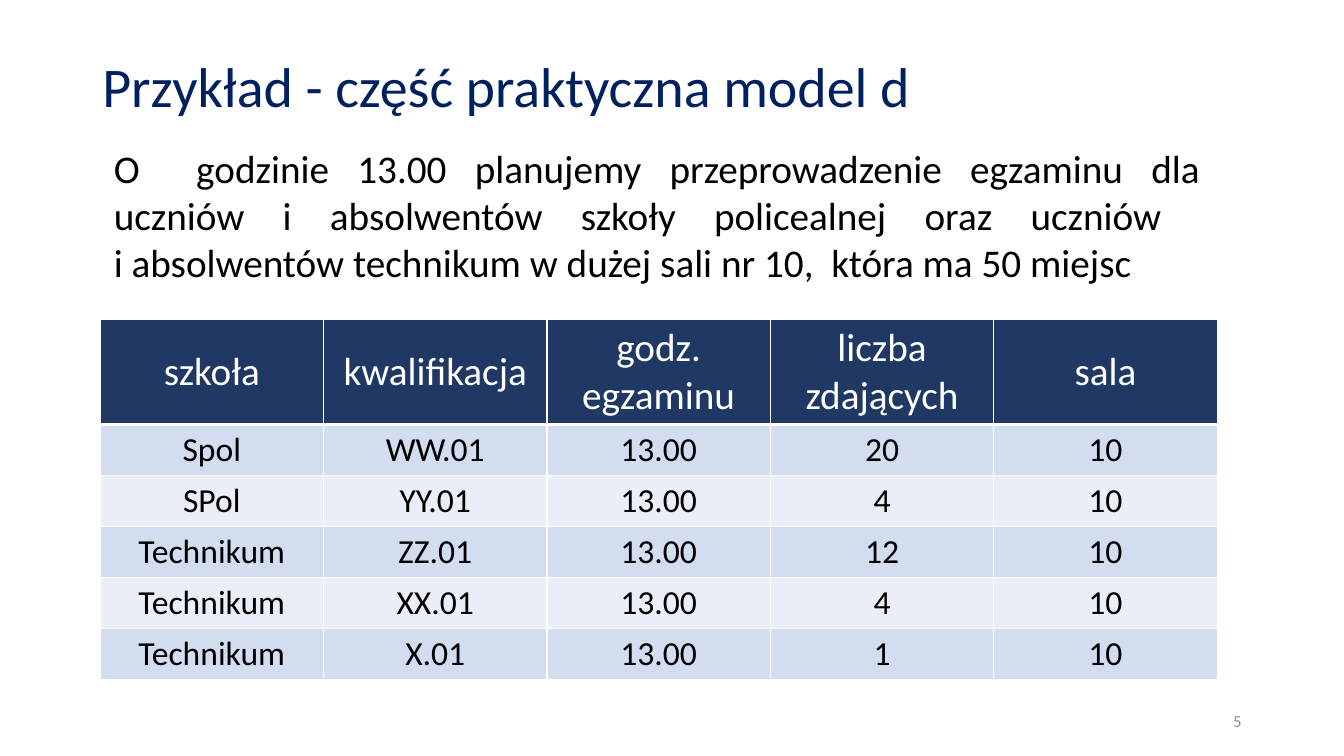
from lxml import etree
from pptx import Presentation
from pptx.dml.color import RGBColor
from pptx.enum import text
from pptx.oxml import ns
from pptx.util import Pt

COLOURS = {"navy": "002060", "header": "203864", "odd": "D2DEEF", "even": "EAEFF7",
           "white": "FFFFFF", "black": "000000", "grey": "8C8C8C"}
LEFT, CENTER = text.PP_ALIGN.LEFT, text.PP_ALIGN.CENTER
RIGHT, JUSTIFY = text.PP_ALIGN.RIGHT, text.PP_ALIGN.JUSTIFY
TOP, MIDDLE = text.MSO_ANCHOR.TOP, text.MSO_ANCHOR.MIDDLE


def write(frame, words, size, colour, align):
    para = frame.paragraphs[0]
    para.text = words
    para.alignment = align
    for span in para.runs:
        for name, value in {"name": "Calibri", "size": Pt(size), "bold": False}.items():
            setattr(span.font, name, value)
        span.font.color.rgb = RGBColor.from_string(COLOURS[colour])
    return para


def add_border(cell, side, width):
    line = etree.SubElement(cell._tc.get_or_add_tcPr(), ns.qn(f"a:ln{side}"), w=str(Pt(width)))
    fill = etree.SubElement(line, ns.qn("a:solidFill"))
    etree.SubElement(fill, ns.qn("a:srgbClr"), val=COLOURS["white"])


deck = Presentation()
deck.slide_width, deck.slide_height = Pt(960), Pt(540)
page = deck.slides.add_slide(deck.slide_layouts[6])

# Title, page number and introduction
intro = ("O  godzinie 13.00 planujemy przeprowadzenie egzaminu dla uczniów i absolwentów "
         "szkoły policealnej oraz uczniów \v"
         "i absolwentów technikum w dużej sali nr 10,  która ma 50 miejsc")
texts = [
    ((66, 35.3, 828, 56.9), "Przykład - część praktyczna model d", 40, "navy", LEFT, MIDDLE, 0.9),
    ((678, 500.5, 216, 28.8), "5", 12, "grey", RIGHT, MIDDLE, 1),
    ((74.2, 99.4, 789.8, 108.7), intro, 28, "black", JUSTIFY, TOP, 1),
]
for place, words, size, colour, align, anchor, spacing in texts:
    box = page.shapes.add_textbox(*map(Pt, place))
    box.text_frame.word_wrap = True
    box.text_frame.vertical_anchor = anchor
    write(box.text_frame, words, size, colour, align).line_spacing = spacing

# Exam table
rows = [
    ("szkoła", "kwalifikacja", "godz. egzaminu", "liczba zdających", "sala"),
    ("Spol", "WW.01", "13.00", "20", "10"),
    ("SPol", "YY.01", "13.00", "4", "10"),
    ("Technikum", "ZZ.01", "13.00", "12", "10"),
    ("Technikum", "XX.01", "13.00", "4", "10"),
    ("Technikum", "X.01", "13.00", "1", "10"),
]
table = page.shapes.add_table(len(rows), len(rows[0]),
                              Pt(71.5), Pt(227.8), Pt(798), Pt(258)).table
for r, row in enumerate(rows):
    is_header = r == 0
    table.rows[r].height = Pt(75.5 if is_header else 36.5)
    fill = "header" if is_header else ("even", "odd")[r % 2]
    for c, words in enumerate(row):
        cell = table.cell(r, c)
        cell.vertical_anchor = MIDDLE if is_header else TOP
        write(cell.text_frame, words, 28 if is_header else 24,
              "white" if is_header else "black", CENTER)
        for side in "LRTB":
            heavy = (is_header and side == "B") or (r == 1 and side == "T")
            add_border(cell, side, 3 if heavy else 1)
        cell.fill.solid()
        cell.fill.fore_color.rgb = RGBColor.from_string(COLOURS[fill])

deck.save("out.pptx")
